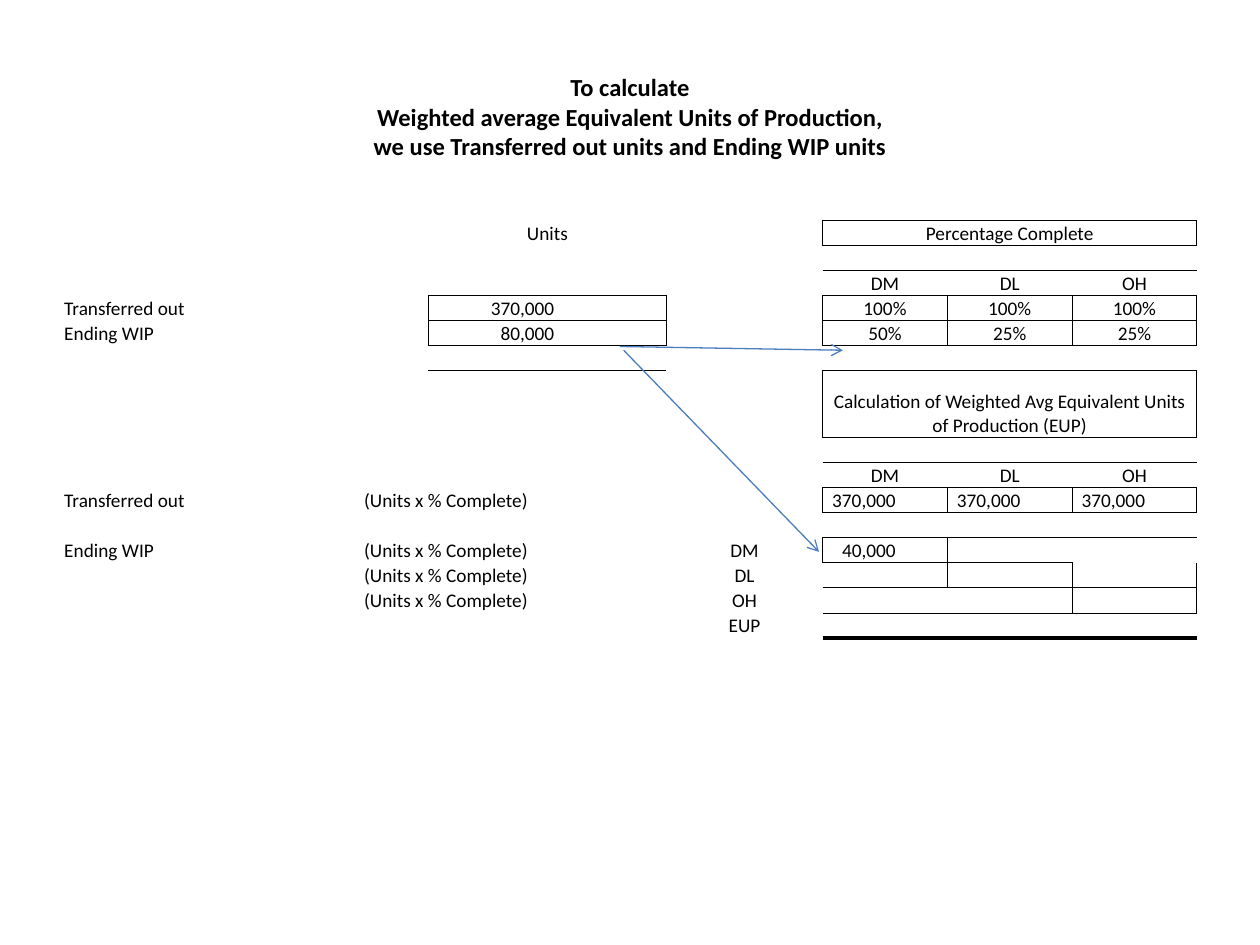
from collections import defaultdict

from lxml import etree
from pptx import Presentation
from pptx.dml.color import RGBColor
from pptx.enum import shapes, text
from pptx.oxml import ns
from pptx.util import Inches, Pt

BLACK = RGBColor(0x00, 0x00, 0x00)
ARROW_BLUE = RGBColor(0x4B, 0x7E, 0xBC)
FONT = "Calibri"
PLAIN_TABLE_STYLE = "{2D5ABB26-0587-4C30-8999-92F81FD0307C}"

COLUMN_WIDTHS = [2.38, 0.52, 1.89, 1.24, 0.99, 0.99, 0.99]
ROW_COUNT, ROW_HEIGHT = 15, 0.19
HEADING_ROW, HEADING_HEIGHT = 6, 0.53
UNITS, STEP, COSTS = 2, 3, (4, 5, 6)
LEFT, CENTER, RIGHT = text.PP_ALIGN.LEFT, text.PP_ALIGN.CENTER, text.PP_ALIGN.RIGHT
COST_NAMES = ["DM", "DL", "OH"]
FORMULA = "(Units x % Complete)"
THIN, THICK = 0.5, 2
SIDES = {"L": (0, -1, "R"), "R": (0, 1, "L"), "T": (-1, 0, "B"), "B": (1, 0, "T")}
MERGES = [(0, 4, 6), (6, 4, 6), (9, 1, 3), (11, 1, 2), (12, 1, 2), (13, 1, 2)]
BOXED = [(3, UNITS), (4, UNITS), (11, 4), (12, 5), (13, 6)]
BOXED += [(row, column) for row in (0, 3, 4, 6, 9) for column in COSTS]


def set_font(font, size, bold=False):
    font.name, font.size, font.bold = FONT, Pt(size), bold
    font.color.rgb = BLACK


def add_title(slide, left, top, width, height):
    title = slide.shapes.title
    title.left, title.top = Inches(left), Inches(top)
    title.width, title.height = Inches(width), Inches(height)
    title.text_frame.text = (
        "To calculate\vWeighted average Equivalent Units of Production,\v"
        "we use Transferred out units and Ending WIP units"
    )
    title.text_frame.vertical_anchor = text.MSO_ANCHOR.MIDDLE
    heading = title.text_frame.paragraphs[0]
    heading.alignment = CENTER
    set_font(heading.font, 14, bold=True)


def worksheet_entries():
    entries = {
        (0, UNITS): ("Units", CENTER, 0.01),
        (0, 4): ("Percentage Complete", CENTER, 0.01),
        (3, UNITS): ("370,000", RIGHT, 0.89),
        (4, UNITS): ("80,000", RIGHT, 0.89),
        (6, 4): ("Calculation of Weighted Avg Equivalent Units of Production (EUP)",
                 CENTER, 0.01),
        (11, 4): ("40,000", RIGHT, 0.41),
        (14, STEP): ("EUP", CENTER, 0.01),
    }
    for row, label in [(3, "Transferred out"), (4, "Ending WIP"),
                       (9, "Transferred out"), (11, "Ending WIP")]:
        entries[row, 0] = (label, LEFT, 0.01)
    for row in (9, 11, 12, 13):
        entries[row, 1] = (FORMULA, LEFT, 0.01)
    for index, (column, cost) in enumerate(zip(COSTS, COST_NAMES)):
        entries[2, column] = entries[8, column] = (cost, CENTER, 0.01)
        entries[11 + index, STEP] = (cost, CENTER, 0.01)
        entries[3, column] = ("100%", CENTER, 0.01)
        entries[4, column] = (("50%", "25%", "25%")[index], CENTER, 0.01)
        entries[9, column] = ("370,000", RIGHT, 0.41)
    return entries


def worksheet_borders():
    edges = [(row, column, side, THIN) for row, column in BOXED for side in SIDES]
    edges += [(13, column, "B", THIN) for column in COSTS]
    edges += [(14, column, "B", THICK) for column in COSTS]
    borders = defaultdict(dict)
    for row, column, side, weight in edges:
        down, across, opposite = SIDES[side]
        borders[row, column][side] = weight
        borders[row + down, column + across][opposite] = weight
    return borders


def draw_borders(cell, weights):
    properties = cell._tc.get_or_add_tcPr()
    for side in SIDES:
        if side in weights:
            line = etree.SubElement(properties, ns.qn(f"a:ln{side}"),
                                    w=str(Pt(weights[side])))
            fill = etree.SubElement(line, ns.qn("a:solidFill"))
            etree.SubElement(fill, ns.qn("a:srgbClr"), val=str(BLACK))
    cell.fill.background()


def write_cell(cell, content, alignment, right_margin):
    cell.margin_left = cell.margin_top = Inches(0.01)
    cell.margin_right, cell.margin_bottom = Inches(right_margin), 0
    cell.vertical_anchor = text.MSO_ANCHOR.BOTTOM
    paragraph = cell.text_frame.paragraphs[0]
    paragraph.text = content
    paragraph.alignment = alignment
    set_font(paragraph.font, 11)
    if not content:
        etree.SubElement(paragraph._p, ns.qn("a:endParaRPr"), sz="1100")


def add_worksheet(slide, left, top, width, height):
    worksheet = slide.shapes.add_table(
        ROW_COUNT, len(COLUMN_WIDTHS),
        Inches(left), Inches(top), Inches(width), Inches(height)).table
    worksheet.first_row = worksheet.horz_banding = False
    worksheet._tbl.tblPr.find(ns.qn("a:tableStyleId")).text = PLAIN_TABLE_STYLE
    for column, column_width in zip(worksheet.columns, COLUMN_WIDTHS):
        column.width = Inches(column_width)
    for index, row in enumerate(worksheet.rows):
        row.height = Inches(HEADING_HEIGHT if index == HEADING_ROW else ROW_HEIGHT)
    for row, first, last in MERGES:
        worksheet.cell(row, first).merge(worksheet.cell(row, last))
    entries, borders = worksheet_entries(), worksheet_borders()
    for row in range(ROW_COUNT):
        for column in range(len(COLUMN_WIDTHS)):
            cell = worksheet.cell(row, column)
            write_cell(cell, *entries.get((row, column), ("", LEFT, 0.01)))
            draw_borders(cell, borders[row, column])
    worksheet.cell(0, 4).vertical_anchor = text.MSO_ANCHOR.MIDDLE


def add_arrow(slide, start_x, start_y, end_x, end_y):
    arrow = slide.shapes.add_connector(
        shapes.MSO_CONNECTOR.STRAIGHT,
        Inches(start_x), Inches(start_y), Inches(end_x), Inches(end_y))
    arrow.line.color.rgb = ARROW_BLUE
    arrow.line.width = Pt(0.75)
    etree.SubElement(arrow.line._get_or_add_ln(), ns.qn("a:tailEnd"), type="arrow")
    etree.SubElement(arrow._element.spPr, ns.qn("a:effectLst"))


def main():
    presentation = Presentation()
    presentation.slide_width, presentation.slide_height = Inches(10), Inches(7.5)
    slide = presentation.slides.add_slide(presentation.slide_layouts[5])
    add_title(slide, 0.5, 0.3, 9, 1.25)
    add_worksheet(slide, 0.5, 1.75, 9, 3.19)
    add_arrow(slide, 4.92, 2.75, 6.69, 2.78)
    add_arrow(slide, 4.95, 2.78, 6.5, 4.38)
    presentation.save("out.pptx")


if __name__ == "__main__":
    main()
